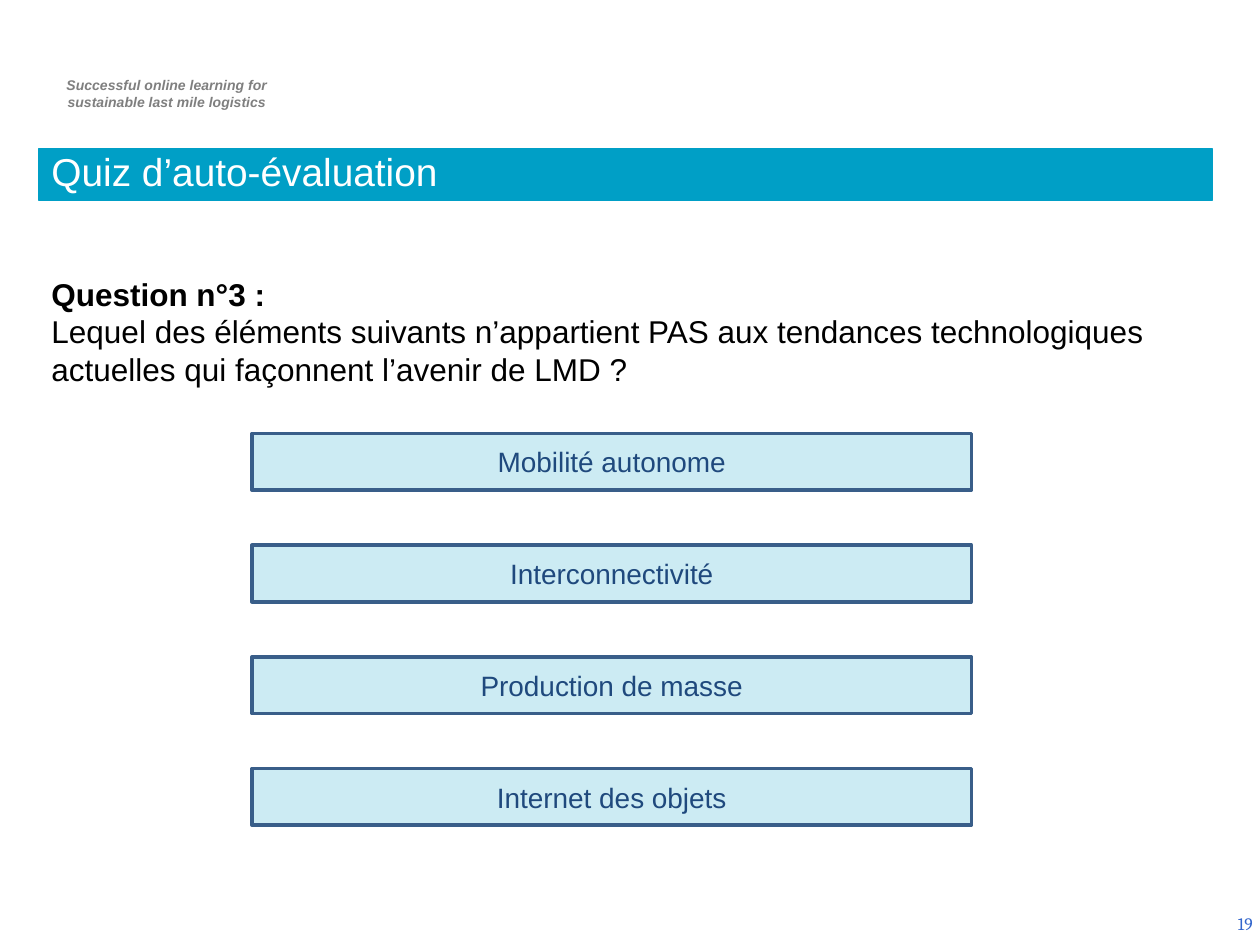
from lxml import etree
from pptx import Presentation
from pptx.dml.color import RGBColor
from pptx.enum.shapes import MSO_SHAPE as Shape
from pptx.enum.text import MSO_ANCHOR as Anchor, PP_ALIGN as Align
from pptx.oxml.ns import qn
from pptx.util import Inches, Pt

TEAL = RGBColor(0x00, 0x9F, 0xC6)
OUTLINE = RGBColor(0x39, 0x5E, 0x89)
NAVY = RGBColor(0x1F, 0x49, 0x7D)
BLUE = RGBColor(0x33, 0x66, 0xCC)
GREY = RGBColor(0x7F, 0x7F, 0x7F)
BLACK = RGBColor(0x00, 0x00, 0x00)
WHITE = RGBColor(0xFF, 0xFF, 0xFF)

TAGLINE = ["Successful online learning for", "sustainable last mile logistics"]
QUESTION = [
    "Question n°3 :",
    "Lequel des éléments suivants n’appartient PAS aux tendances technologiques "
    "actuelles qui façonnent l’avenir de LMD ?",
]
ANSWERS = ["Mobilité autonome", "Interconnectivité", "Production de masse", "Internet des objets"]


def write(box, lines, size, color, name="Arial", align=Align.LEFT, anchor=Anchor.TOP, **formats):
    """Fill a box with one paragraph per line and return the paragraphs."""
    frame = box.text_frame
    frame.word_wrap = True
    frame.vertical_anchor = anchor
    frame.text = "\n".join(lines)
    font_values = {"size": Pt(size), "name": name, **formats}
    for para in frame.paragraphs:
        para.alignment = align
        for span in para.runs:
            for key, value in font_values.items():
                setattr(span.font, key, value)
            span.font.color.rgb = color
    return frame.paragraphs


def add_bar(page, area, fill, line, width):
    """Add a flat rectangle in the given area."""
    bar = page.shapes.add_shape(Shape.RECTANGLE, *map(Inches, area))
    bar.shadow.inherit = False
    bar.fill.solid()
    bar.fill.fore_color.rgb = fill
    bar.line.color.rgb = line
    bar.line.width = Pt(width)
    return bar


def add_tagline(page, area):
    """Place the small project tagline."""
    box = page.shapes.add_textbox(*map(Inches, area))
    for para in write(box, TAGLINE, 8, GREY, align=Align.CENTER, bold=True, italic=True):
        para._p.get_or_add_pPr().set("marL", str(Inches(0.04)))


def add_title(page, area):
    """Place the title on its coloured band."""
    bar = add_bar(page, area, TEAL, TEAL, 0.75)
    title = write(bar, ["Quiz d’auto-évaluation"], 22.2, WHITE, anchor=Anchor.BOTTOM)[0]
    title.line_spacing = 0.8
    margins = title._p.get_or_add_pPr()
    for key, value in {"marL": 0.81, "indent": -0.81}.items():
        margins.set(key, str(Inches(value)))


def add_question(page, area):
    """Place the bold question label above its wording."""
    box = page.shapes.add_textbox(*map(Inches, area))
    label = write(box, QUESTION, 18, BLACK)[0]
    label.runs[0].font.bold = True


def add_answers(page, area, bar_height=0.45):
    """Spread the translucent answer bars evenly down the area."""
    left, top, width, height = area
    step = (height - bar_height) / (len(ANSWERS) - 1)
    for index, answer in enumerate(ANSWERS):
        bar = add_bar(page, (left, top + index * step, width, bar_height), TEAL, OUTLINE, 2)
        tint = bar._element.spPr.find(qn("a:solidFill"))[0]
        etree.SubElement(tint, qn("a:alpha")).set("val", "20000")
        write(bar, [answer], 16, NAVY, align=Align.CENTER, anchor=Anchor.MIDDLE)


def add_page_number(page, area):
    """Place the page number in the bottom corner."""
    box = page.shapes.add_textbox(*map(Inches, area))
    write(box, ["19"], 10, BLUE, name="Cambria", align=Align.RIGHT, anchor=Anchor.MIDDLE)


def main():
    """Build and save the quiz slide."""
    deck = Presentation()
    deck.slide_width, deck.slide_height = Inches(10), Inches(7.5)
    page = deck.slides.add_slide(deck.slide_layouts[6])
    add_tagline(page, (0.29, 0.56, 2.03, 0.37))
    add_page_number(page, (7.71, 7.13, 2.33, 0.4))
    add_question(page, (0.31, 2.13, 9.31, 1.31))
    add_answers(page, (2, 3.44, 5.71, 3.11))
    add_title(page, (0.31, 1.18, 9.31, 0.41))
    deck.save("out.pptx")


if __name__ == "__main__":
    main()
